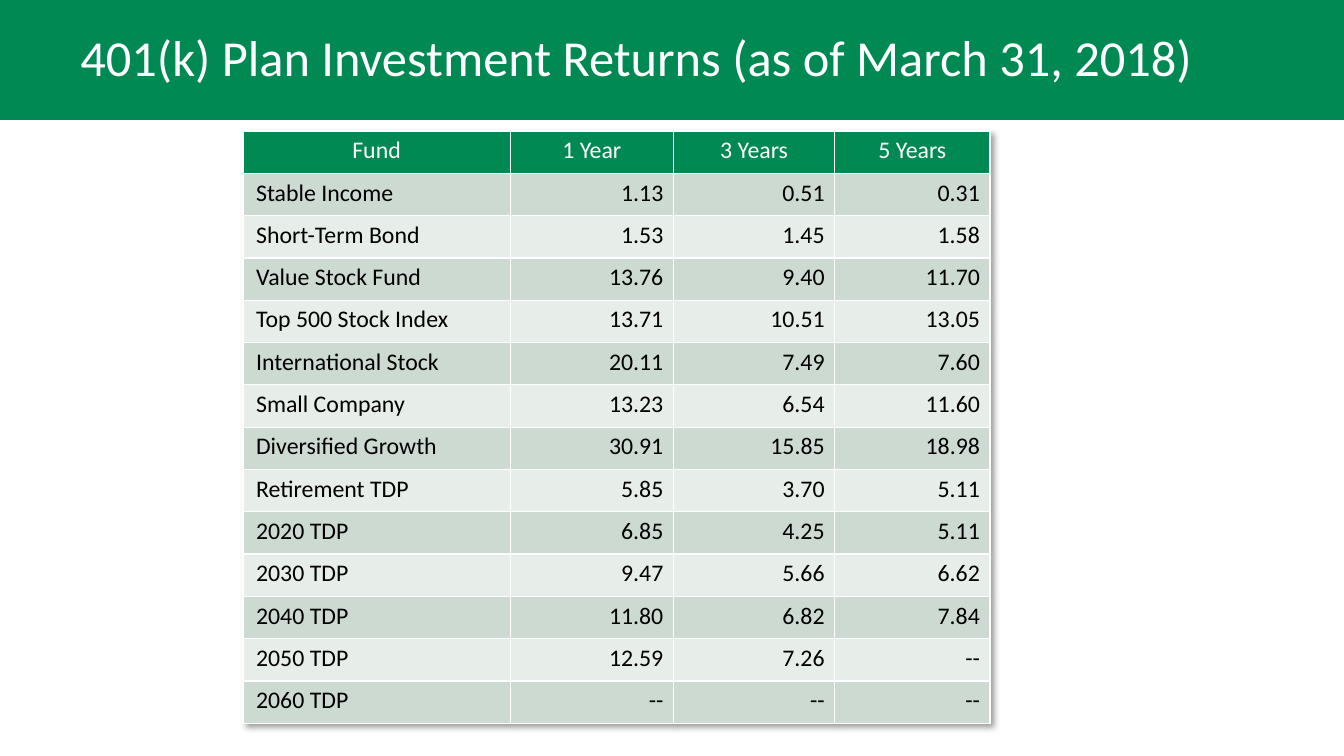
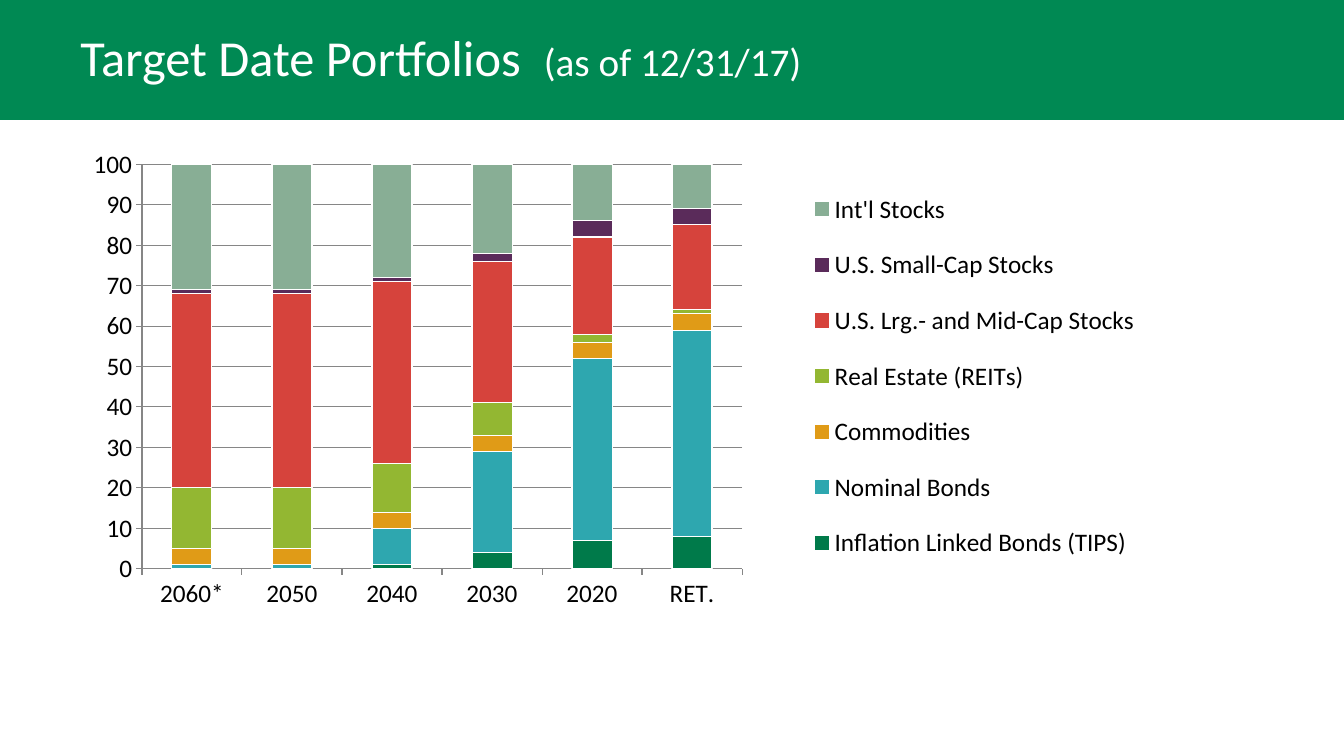
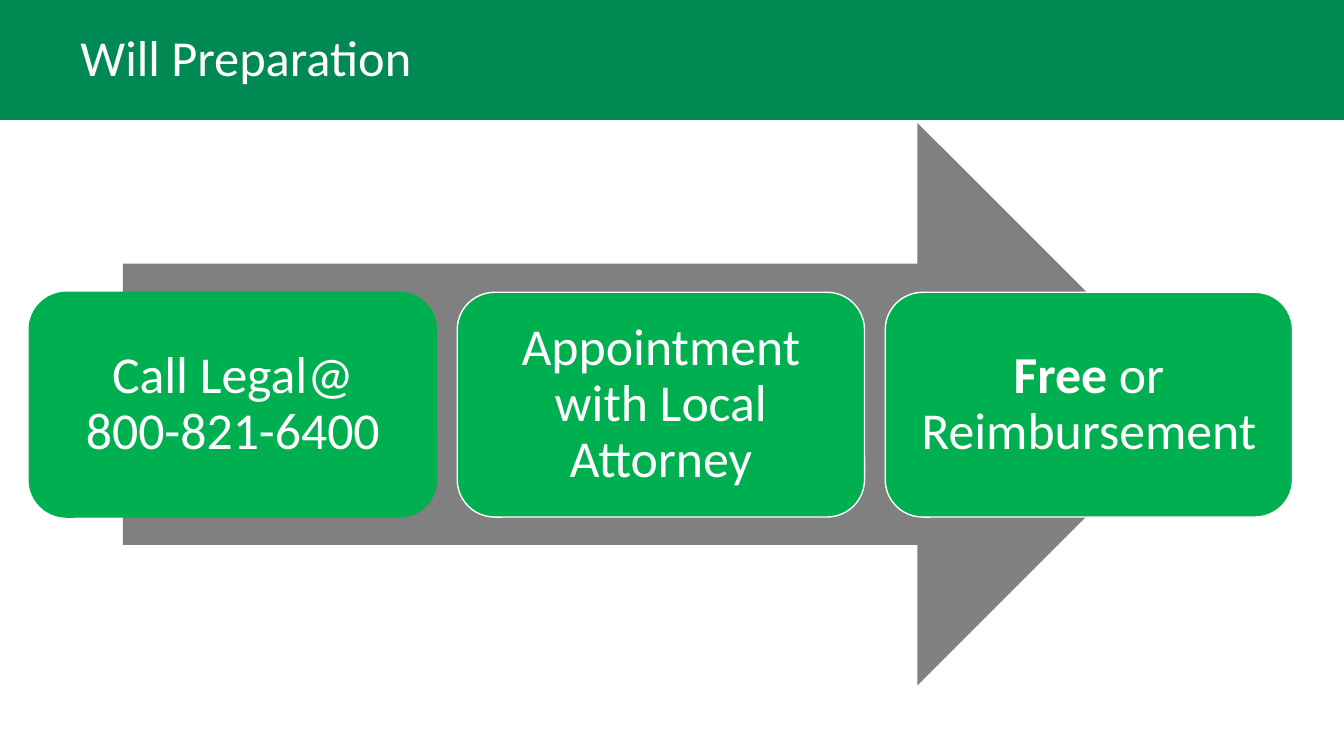
"""Build three benefit slides: fund returns, target date portfolios and will preparation."""
from lxml import etree
from pptx import Presentation
from pptx.chart.data import CategoryChartData
from pptx.dml.color import RGBColor
from pptx.enum import chart as charts, shapes, text
from pptx.oxml import parse_xml
from pptx.oxml.ns import nsdecls, qn
from pptx.util import Inches, Pt

FONT = "Calibri"
BAND_GREEN = RGBColor(0x00, 0x89, 0x53)
STEP_GREEN = RGBColor(0x00, 0xB0, 0x50)
ROW_DARK = RGBColor(0xCC, 0xDA, 0xD1)
ROW_LIGHT = RGBColor(0xE7, 0xED, 0xE9)
ARROW_GRAY = RGBColor(0x80, 0x80, 0x80)
GRID_GRAY = RGBColor(0x86, 0x86, 0x86)
WHITE = RGBColor(0xFF, 0xFF, 0xFF)
BLACK = RGBColor(0x00, 0x00, 0x00)

RETURNS_TITLE = ["401(k) Plan Investment Returns (as of March 31, 2018)"]
RETURNS = [
    ("Fund", "1 Year", "3 Years", "5 Years"),
    ("Stable Income", "1.13", "0.51", "0.31"),
    ("Short-Term Bond", "1.53", "1.45", "1.58"),
    ("Value Stock Fund", "13.76", "9.40", "11.70"),
    ("Top 500 Stock Index", "13.71", "10.51", "13.05"),
    ("International Stock", "20.11", "7.49", "7.60"),
    ("Small Company", "13.23", "6.54", "11.60"),
    ("Diversified Growth", "30.91", "15.85", "18.98"),
    ("Retirement TDP", "5.85", "3.70", "5.11"),
    ("2020 TDP", "6.85", "4.25", "5.11"),
    ("2030 TDP", "9.47", "5.66", "6.62"),
    ("2040 TDP", "11.80", "6.82", "7.84"),
    ("2050 TDP", "12.59", "7.26", "--"),
    ("2060 TDP", "--", "--", "--"),
]
COLUMN_WIDTHS = [2.65, 1.62, 1.6, 1.54]
ROW_HEIGHT = 0.42

PORTFOLIO_TITLE = ["Target Date Portfolios  ", ("(as of 12/31/17)", {"size": 28})]
TARGET_DATES = ["2060*", "2050", "2040", "2030", "2020", "RET."]
HOLDINGS = [
    ("Inflation Linked Bonds (TIPS)", (0, 0, 1, 4, 7, 8), RGBColor(0x00, 0x7A, 0x4A)),
    ("Nominal Bonds", (1, 1, 9, 25, 45, 51), RGBColor(0x2E, 0xA7, 0xAF)),
    ("Commodities", (4, 4, 4, 4, 4, 4), RGBColor(0xE0, 0x9B, 0x17)),
    ("Real Estate (REITs)", (15, 15, 12, 8, 2, 1), RGBColor(0x93, 0xB7, 0x32)),
    ("U.S. Lrg.- and Mid-Cap Stocks", (48, 48, 45, 35, 24, 21), RGBColor(0xD6, 0x43, 0x3C)),
    ("U.S. Small-Cap Stocks", (1, 1, 1, 2, 4, 4), RGBColor(0x5A, 0x2B, 0x5A)),
    ("Int'l Stocks", (31, 31, 28, 22, 14, 11), RGBColor(0x88, 0xAE, 0x95)),
]
PLOT_LAYOUT = {"x": 0.08, "y": 0.05, "w": 0.53, "h": 0.84}
LEGEND_LAYOUT = {"x": 0.66, "y": 0.06, "w": 0.31, "h": 0.86}

WILL_TITLE = ["Will Preparation"]
WILL_STEPS = [
    (["Call Legal@\v800-821-6400"], STEP_GREEN),
    (["Appointment with Local Attorney"], WHITE),
    ([("Free", {"bold": True}), " or Reimbursement"], WHITE),
]
STEP_LEFT, STEP_PITCH = 0.29, 4.245


def write_text(frame, runs, size=18, color=WHITE, align=None, spacing=None):
    """Write one paragraph of plain or (text, overrides) runs into a text frame."""
    paragraph = frame.paragraphs[0]
    paragraph.alignment = align
    paragraph.line_spacing = spacing
    for item in runs:
        words, overrides = (item, {}) if isinstance(item, str) else item
        for number, line in enumerate(words.split("\v")):
            if number:
                paragraph.add_line_break()
            run = paragraph.add_run()
            run.text = line
            run.font.name = FONT
            run.font.size = Pt(overrides.get("size", size))
            run.font.bold = overrides.get("bold", False)
            run.font.color.rgb = color


def set_margins(frame, left, top, right, bottom):
    """Set the four insets of a wrapped, vertically centred frame."""
    frame.word_wrap = True
    frame.vertical_anchor = text.MSO_ANCHOR.MIDDLE
    frame.margin_left, frame.margin_top = Inches(left), Inches(top)
    frame.margin_right, frame.margin_bottom = Inches(right), Inches(bottom)


def add_box(slide, kind, left, top, width, height, fill, line=None):
    """Add a flat preset shape."""
    shape = slide.shapes.add_shape(
        kind, Inches(left), Inches(top), Inches(width), Inches(height))
    shape.shadow.inherit = False
    shape.fill.solid()
    shape.fill.fore_color.rgb = fill
    if line is None:
        shape.line.fill.background()
    else:
        shape.line.color.rgb = line
        shape.line.width = Pt(1)
    return shape


def add_titled_slide(presentation, title_runs):
    """Add a blank slide with the green band and its title."""
    slide = presentation.slides.add_slide(presentation.slide_layouts[6])
    add_box(slide, shapes.MSO_SHAPE.RECTANGLE, 0, 0, 13.33, 1.19, BAND_GREEN)
    title = slide.shapes.add_textbox(Inches(0.7), 0, Inches(12), Inches(1.15))
    set_margins(title.text_frame, 0.1, 0.05, 0.1, 0)
    write_text(title.text_frame, title_runs, size=36, spacing=0.9)
    return slide


def add_cell_borders(cell):
    """Draw white one-point lines on all sides of a cell."""
    properties = cell._tc.get_or_add_tcPr()
    for index, side in enumerate(("lnL", "lnR", "lnT", "lnB")):
        properties.insert(index, parse_xml(
            f'<a:{side} {nsdecls("a")} w="12700"><a:solidFill>'
            f'<a:srgbClr val="{WHITE}"/></a:solidFill></a:{side}>'))


def add_table_shadow(table):
    """Give a table a soft shadow to the lower right."""
    table._tbl.tblPr.insert(0, parse_xml(
        f'<a:effectLst {nsdecls("a")}><a:outerShdw blurRad="50800" dist="38100" '
        'dir="2700000" algn="tl" rotWithShape="0"><a:srgbClr val="000000">'
        '<a:alpha val="40000"/></a:srgbClr></a:outerShdw></a:effectLst>'))


def build_returns(presentation):
    """Build the table of fund returns."""
    slide = add_titled_slide(presentation, RETURNS_TITLE)
    table = slide.shapes.add_table(
        len(RETURNS), len(COLUMN_WIDTHS), Inches(2.41), Inches(1.3),
        Inches(sum(COLUMN_WIDTHS)), Inches(ROW_HEIGHT * len(RETURNS))).table
    add_table_shadow(table)
    for column, width in zip(table.columns, COLUMN_WIDTHS):
        column.width = Inches(width)
    for row_index, values in enumerate(RETURNS):
        table.rows[row_index].height = Inches(ROW_HEIGHT)
        header = row_index == 0
        fill = BAND_GREEN if header else (ROW_LIGHT, ROW_DARK)[row_index % 2]
        for column_index, value in enumerate(values):
            cell = table.cell(row_index, column_index)
            cell.fill.solid()
            cell.fill.fore_color.rgb = fill
            add_cell_borders(cell)
            align = text.PP_ALIGN.CENTER if header else text.PP_ALIGN.RIGHT
            if column_index == 0 and not header:
                align = text.PP_ALIGN.LEFT
                cell.margin_left = cell.margin_right = Inches(0.13)
            write_text(cell.text_frame, [value], size=17, align=align,
                       color=WHITE if header else BLACK)


def make_layout(position, inner=False):
    """Return a manual chart layout element."""
    layout = parse_xml(f'<c:layout {nsdecls("c")}><c:manualLayout/></c:layout>')
    settings = {"layoutTarget": "inner"} if inner else {}
    settings.update({"xMode": "edge", "yMode": "edge"}, **position)
    for name, value in settings.items():
        etree.SubElement(layout[0], qn(f"c:{name}")).set("val", str(value))
    return layout


def place_layout(parent, layout, index):
    """Replace the layout of a chart part."""
    for previous in parent.findall(qn("c:layout")):
        parent.remove(previous)
    parent.insert(index, layout)


def build_portfolios(presentation):
    """Build the stacked chart of portfolio holdings."""
    slide = add_titled_slide(presentation, PORTFOLIO_TITLE)
    data = CategoryChartData()
    data.categories = TARGET_DATES
    for name, values, _ in HOLDINGS:
        data.add_series(name, values)
    chart = slide.shapes.add_chart(
        charts.XL_CHART_TYPE.COLUMN_STACKED, Inches(0.51), Inches(1.39),
        Inches(11.23), Inches(4.78), data).chart
    chart.has_title = False
    chart.font.name = FONT
    chart.font.size = Pt(18)
    chart.font.color.rgb = BLACK

    plot = chart.plots[0]
    plot.gap_width, plot.overlap = 150, 100
    plot.vary_by_categories = False
    for series, (_, _, color) in zip(plot.series, HOLDINGS):
        series.format.fill.solid()
        series.format.fill.fore_color.rgb = color
        series.format.line.color.rgb = WHITE
        series.format.line.width = Pt(0.75)

    value_axis = chart.value_axis
    value_axis.minimum_scale, value_axis.maximum_scale = 0, 100
    value_axis.major_unit = 10
    value_axis.has_major_gridlines = True
    for axis in (value_axis, chart.category_axis):
        axis.major_tick_mark = charts.XL_TICK_MARK.OUTSIDE
    for part in (value_axis, value_axis.major_gridlines, chart.category_axis):
        part.format.line.color.rgb = GRID_GRAY
        part.format.line.width = Pt(0.75)

    chart.has_legend = True
    chart.legend.position = charts.XL_LEGEND_POSITION.RIGHT
    chart.legend.include_in_layout = False
    place_layout(chart._chartSpace.chart.plotArea, make_layout(PLOT_LAYOUT, True), 0)
    place_layout(chart.legend._element, make_layout(LEGEND_LAYOUT), 1)


def build_will_steps(presentation):
    """Build the three steps over a wide arrow."""
    slide = add_titled_slide(presentation, WILL_TITLE)
    add_box(slide, shapes.MSO_SHAPE.RIGHT_ARROW, 1.22, 1.22, 10.67, 5.58, ARROW_GRAY)
    for index, (runs, outline) in enumerate(WILL_STEPS):
        step = add_box(slide, shapes.MSO_SHAPE.ROUNDED_RECTANGLE,
                       STEP_LEFT + index * STEP_PITCH, 2.9, 4.04, 2.23,
                       STEP_GREEN, outline)
        set_margins(step.text_frame, 0.15, 0.15, 0.15, 0.15)
        write_text(step.text_frame, runs, size=37, spacing=0.9,
                   align=text.PP_ALIGN.CENTER)


def main():
    """Build and save the presentation."""
    presentation = Presentation()
    presentation.slide_width = Inches(13.33)
    presentation.slide_height = Inches(7.5)
    build_returns(presentation)
    build_portfolios(presentation)
    build_will_steps(presentation)
    presentation.save("out.pptx")


if __name__ == "__main__":
    main()
